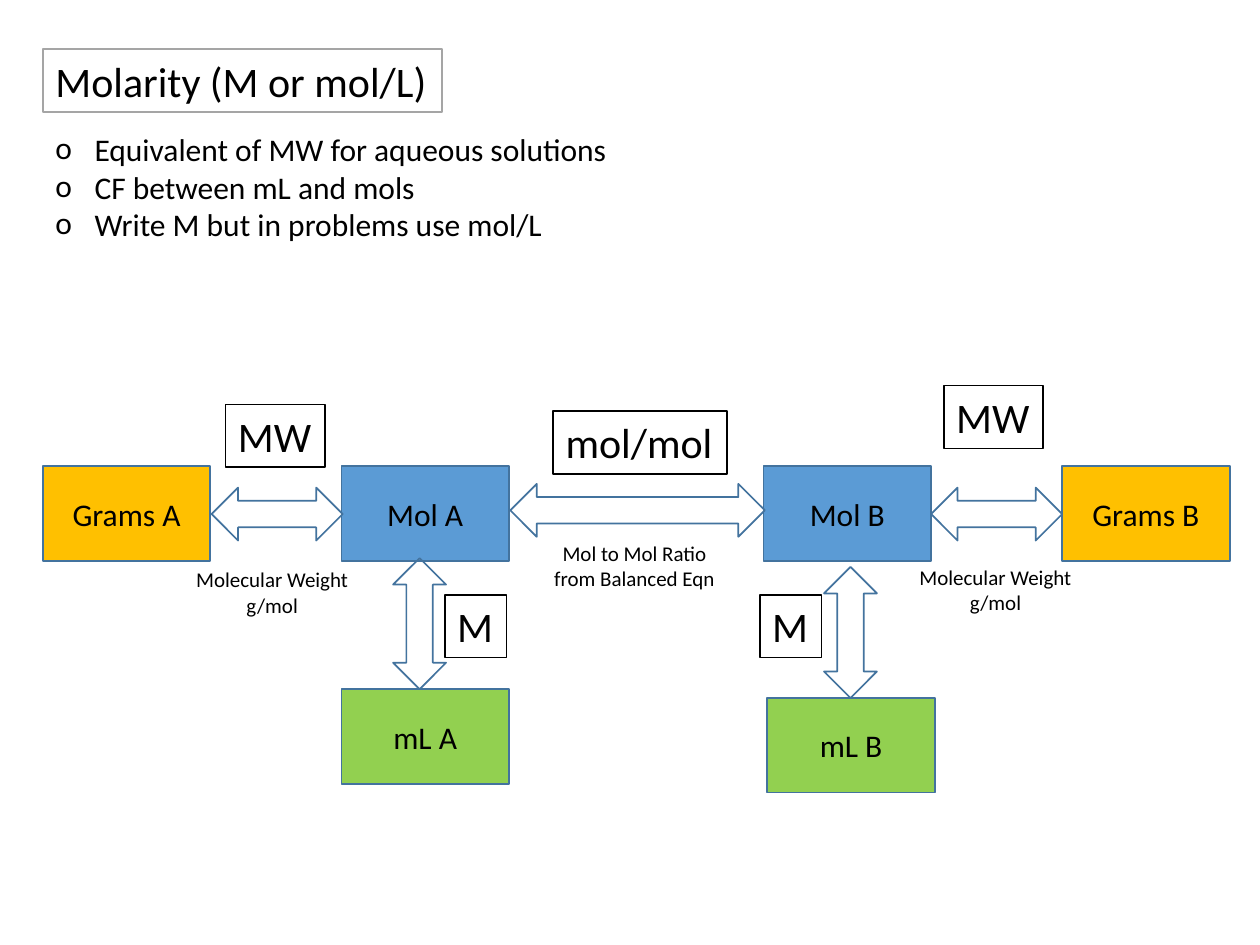
from pptx import Presentation
from pptx.util import Inches, Pt
from pptx.dml.color import RGBColor
from pptx.enum.shapes import MSO_SHAPE
from pptx.enum.text import MSO_ANCHOR, MSO_AUTO_SIZE, PP_ALIGN
from lxml.etree import SubElement
from pptx.oxml.ns import qn

C = {"text": "000000", "white": "FFFFFF", "gray": "A5A5A5", "edge": "43739E",
     "mol": "5B9BD5", "grams": "FFC000", "ml": "92D050"}

prs = Presentation()
prs.slide_width, prs.slide_height = Inches(10), Inches(7.5)
COL, ROW = prs.slide_width / 100, prs.slide_height / 75
s = prs.slides.add_slide(prs.slide_layouts[1])


def place(sp, x, y, w, h, fill=None, line=None):
    sp.left, sp.top = round(x * COL), round(y * ROW)
    sp.width, sp.height = round(w * COL), round(h * ROW)
    if fill:
        sp.fill.solid()
        sp.fill.fore_color.rgb = RGBColor.from_string(C[fill])
    else:
        sp.fill.background()
    if line:
        sp.line.color.rgb = RGBColor.from_string(C[line])
        sp.line.width = Pt(1)
    return sp


def write(sp, text, size=18, align=PP_ALIGN.LEFT, anchor=MSO_ANCHOR.TOP, wrap=False, bullet=None):
    tf = sp.text_frame
    tf.text = text
    tf.auto_size = MSO_AUTO_SIZE.NONE
    tf.word_wrap = wrap
    tf.vertical_anchor = anchor
    for p in tf.paragraphs:
        p.alignment = align
        p.space_before = Pt(0)
        r = p.runs[0]
        r.font.size, r.font.name = Pt(size), "Calibri"
        r.font.color.rgb = RGBColor.from_string(C["text"])
        if bullet:
            pPr = p._p.get_or_add_pPr()
            pPr.set("marL", str(Inches(0.31)))
            pPr.set("indent", str(-Inches(0.31)))
            SubElement(pPr, qn("a:buFont")).set("typeface", "Calibri")
            SubElement(pPr, qn("a:buChar")).set("char", bullet)


title, body = s.placeholders
place(title, 3.4, 3.9, 31.7, 5, "white", "gray")
write(title, "Molarity (M or mol/L)", size=24)
place(body, 3.4, 9.8, 46.3, 10.1)
write(body, "Equivalent of MW for aqueous solutions\nCF between mL and mols\n"
      "Write M but in problems use mol/L", bullet="o")

for text, x, y, fill in [("Mol A", 27.1, 37, "mol"), ("Mol B", 60.6, 37, "mol"),
                         ("Grams A", 3.4, 37, "grams"), ("Grams B", 84.3, 37, "grams"),
                         ("mL A", 27.1, 54.7, "ml"), ("mL B", 60.9, 55.4, "ml")]:
    sp = s.shapes.add_shape(MSO_SHAPE.RECTANGLE, 0, 0, 0, 0)
    sp.shadow.inherit = False
    place(sp, x, y, 13.3, 7.5, fill, "edge")
    write(sp, text, align=PP_ALIGN.CENTER, anchor=MSO_ANCHOR.MIDDLE, wrap=True)

for x, y, w, angle in [(40.5, 38.4, 20.2, 0), (16.8, 38.7, 10.4, 0), (73.9, 38.7, 10.4, 0),
                       (28.1, 47.4, 10.4, 90), (62.3, 48.1, 10.4, 90)]:
    sp = s.shapes.add_shape(MSO_SHAPE.LEFT_RIGHT_ARROW, 0, 0, 0, 0)
    sp.shadow.inherit = False
    place(sp, x, y, w, 4.2, line="edge")
    sp.rotation = angle

for text, x, y, w in [("Mol to Mol Ratio\nfrom Balanced Eqn", 42.9, 42.4, 14.9),
                      ("Molecular Weight\ng/mol", 14.5, 44.5, 14.2),
                      ("Molecular Weight\ng/mol", 71.9, 44.3, 14.2)]:
    sp = place(s.shapes.add_textbox(0, 0, 0, 0), x, y, w, 5)
    write(sp, text, size=12, align=PP_ALIGN.CENTER)

for text, x, y, w in [("MW", 17.9, 32.1, 7.9), ("MW", 74.9, 30.6, 7.9),
                      ("mol/mol", 43.9, 32.6, 13.8),
                      ("M", 35.3, 47.2, 4.9), ("M", 60.3, 47.2, 4.9)]:
    sp = s.shapes.add_shape(MSO_SHAPE.RECTANGLE, 0, 0, 0, 0)
    sp.shadow.inherit = False
    place(sp, x, y, w, 5, "white", "text")
    write(sp, text, size=24)

prs.save("out.pptx")
